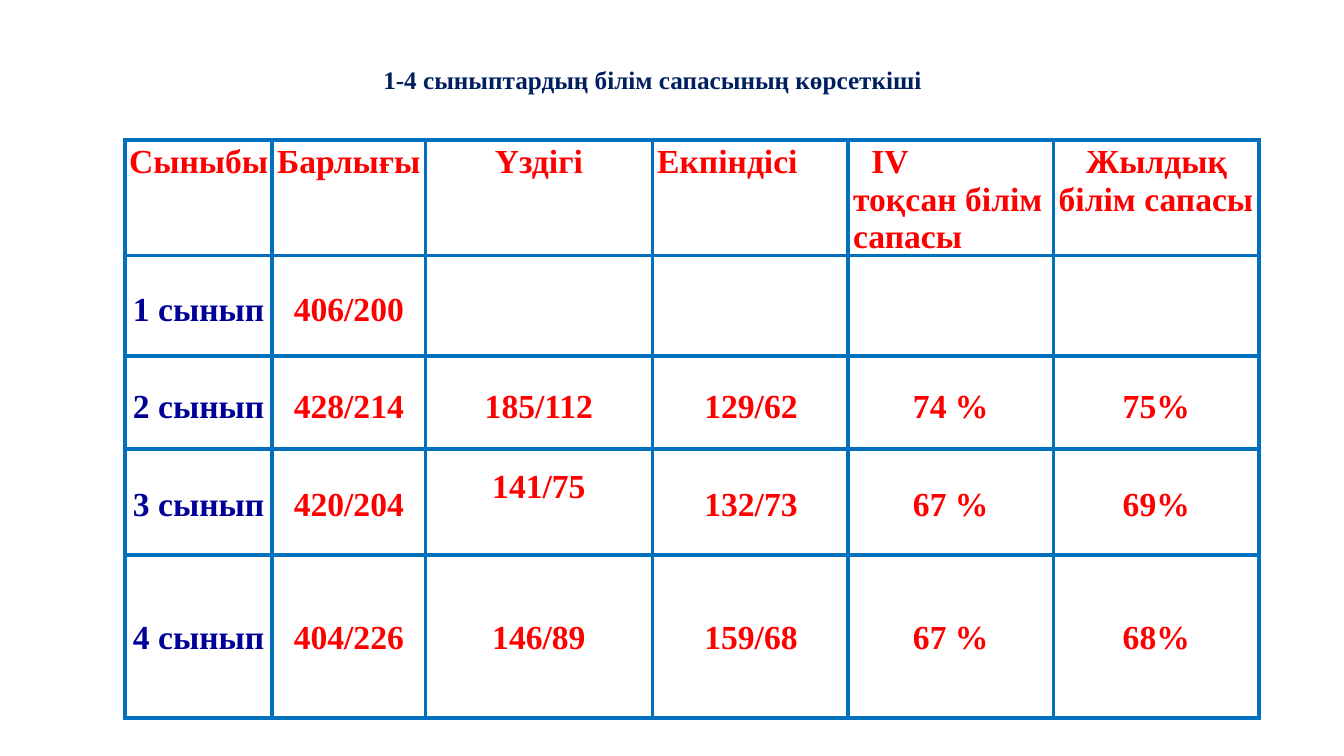
"""Build a slide with a table of learning quality for grades 1-4."""
from lxml.etree import SubElement
from pptx import Presentation
from pptx.dml.color import RGBColor
from pptx.enum.text import PP_ALIGN
from pptx.oxml.ns import qn
from pptx.util import Cm, Pt

COLORS = {"title": "001F5F", "red": "FF0000", "grade": "000099", "border": "0070BF"}
COL_WIDTHS = [3.71, 3.86, 5.72, 4.93, 5.18, 5.18]
ROW_HEIGHTS = [2.84, 2.54, 2.34, 2.67, 4.11]
TOP_MARGINS = [0.1, 0.91, 0.81, 0.94, 1.63]
HEADER_INDENTS = {4: 0.46, 5: 0.69}
ROWS = [
    ["Сыныбы", "Барлығы", "Үздігі", "Екпіндісі", "IV\vтоқсан білім сапасы", "Жылдық білім сапасы"],
    ["1 сынып", "406/200", "", "", "", ""],
    ["2 сынып", "428/214", "185/112", "129/62", "74 %", "75%"],
    ["3 сынып", "420/204", "141/75", "132/73", "67 %", "69%"],
    ["4 сынып", "404/226", "146/89", "159/68", "67 %", "68%"],
]


def write(tf, text, size=24, color="red", align=PP_ALIGN.CENTER, top=0, right=0, left=0, indent=0):
    """Fill a text frame or a table cell's text with one formatted paragraph."""
    p = tf.paragraphs[0]
    p.text = text
    p.alignment = align
    p.font.size = Pt(size)
    pPr = p._p.get_or_add_pPr()
    pPr.set("marL", str(Cm(left)))
    pPr.set("indent", str(Cm(indent)))
    for r in p.runs:
        r.font.name = "Times New Roman"
        r.font.size = Pt(size)
        r.font.bold = True
        r.font.color.rgb = RGBColor.from_string(COLORS[color])


def add_borders(cell):
    """Draw a 3 pt line on every side of a cell."""
    tcPr = cell._tc.get_or_add_tcPr()
    for side in ("a:lnL", "a:lnR", "a:lnT", "a:lnB"):
        ln = SubElement(tcPr, qn(side), w=str(Pt(3)))
        fill = SubElement(ln, qn("a:solidFill"))
        SubElement(fill, qn("a:srgbClr"), val=COLORS["border"])


prs = Presentation()
prs.slide_width, prs.slide_height = Cm(33.87), Cm(19.05)
s = prs.slides.add_slide(prs.slide_layouts[6])

table = s.shapes.add_table(len(ROWS), len(COL_WIDTHS), Cm(3.15), Cm(3.53),
                           Cm(sum(COL_WIDTHS)), Cm(sum(ROW_HEIGHTS))).table
table.first_row = table.horz_banding = False
for col, width in zip(table.columns, COL_WIDTHS):
    col.width = Cm(width)
for row, height in zip(table.rows, ROW_HEIGHTS):
    row.height = Cm(height)

for i, values in enumerate(ROWS):
    for j, text in enumerate(values):
        cell = table.cell(i, j)
        add_borders(cell)
        cell.fill.background()
        cell.margin_left = cell.margin_right = cell.margin_bottom = 0
        cell.margin_top = Cm(0.48 if text == "141/75" else TOP_MARGINS[i])
        if j == 3:
            cell.margin_right = Cm(1.27)
        color = "grade" if i and j == 0 else "red"
        if i == 0 and j in HEADER_INDENTS:
            write(cell.text_frame, text, align=PP_ALIGN.LEFT, left=0.13, indent=HEADER_INDENTS[j])
        else:
            write(cell.text_frame, text, color=color,
                  align=PP_ALIGN.RIGHT if j == 3 else PP_ALIGN.CENTER)

tf = s.shapes.add_textbox(Cm(9.63), Cm(1.6), Cm(13.64), Cm(0.84)).text_frame
tf.word_wrap = False
tf.margin_left = tf.margin_right = tf.margin_bottom = 0
tf.margin_top = Cm(0.03)
write(tf, "1-4 сыныптардың білім сапасының көрсеткіші", size=18, color="title",
      align=PP_ALIGN.LEFT, left=0.03)

prs.save("out.pptx")
